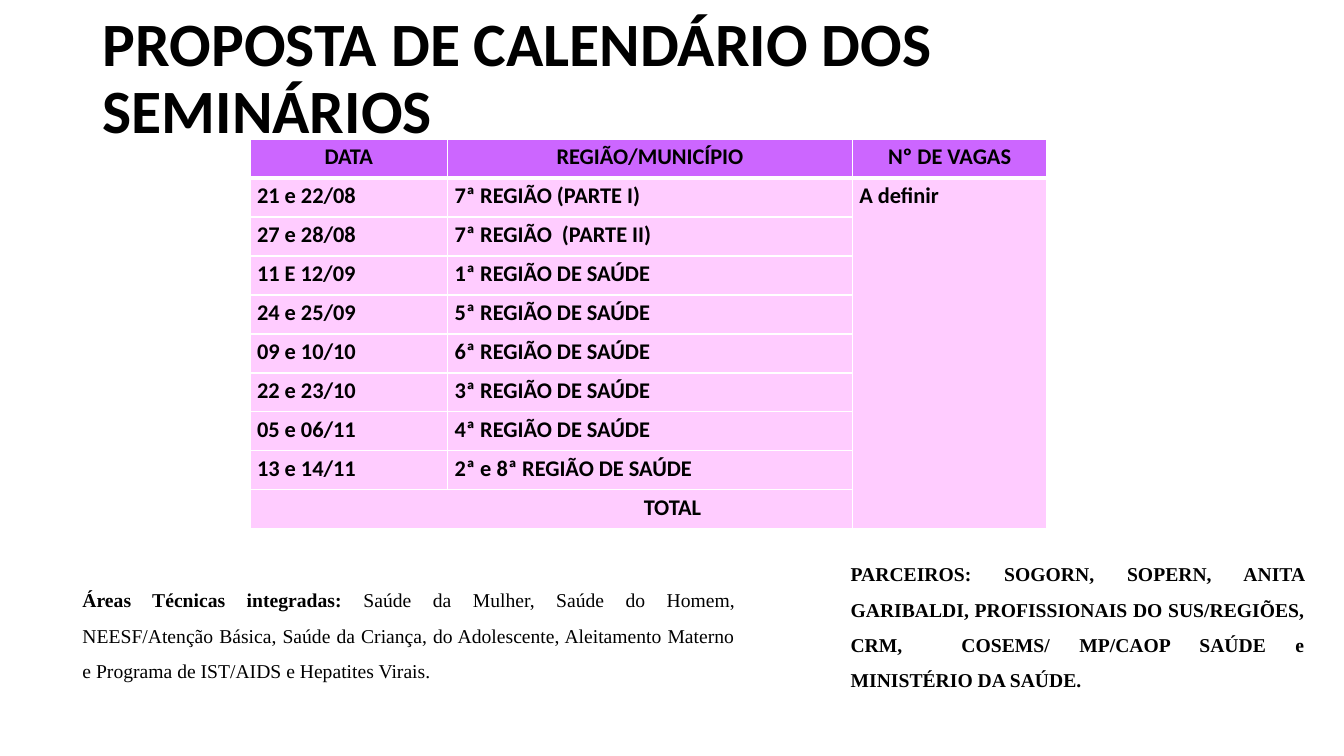
from pptx import Presentation
from pptx.dml.color import RGBColor
from pptx.enum.text import MSO_ANCHOR, MSO_AUTO_SIZE, PP_ALIGN
from pptx.oxml import parse_xml
from pptx.oxml.ns import nsdecls
from pptx.util import Inches, Pt

BLACK, WHITE, PURPLE, PINK = "000000", "FFFFFF", "CC66FF", "FFCCFF"
COLUMN_WEIGHTS = (1.96, 3.77, 1.93)
HEADER = ("DATA", "REGIÃO/MUNICÍPIO", "Nº DE VAGAS")
SEMINARS = (
    ("21 e 22/08", "7ª REGIÃO (PARTE I)"),
    ("27 e 28/08", "7ª REGIÃO  (PARTE II)"),
    ("11 E 12/09", "1ª REGIÃO DE SAÚDE"),
    ("24 e 25/09", "5ª REGIÃO DE SAÚDE"),
    ("09 e 10/10", "6ª REGIÃO DE SAÚDE"),
    ("22 e 23/10", "3ª REGIÃO DE SAÚDE"),
    ("05 e 06/11", "4ª REGIÃO DE SAÚDE"),
    ("13 e 14/11", "2ª e 8ª REGIÃO DE SAÚDE"),
)


def rgb(color):
    return RGBColor.from_string(color)


def area(prs, left, top, width, height):
    """Turn percentages of the slide into a box."""
    w, h = prs.slide_width, prs.slide_height
    return [int(size * share / 100) for size, share in
            ((w, left), (h, top), (w, width), (h, height))]


def style(p, font, size, align, spacing, bold=True):
    p.alignment, p.line_spacing = align, spacing
    p.font.name, p.font.size, p.font.bold = font, Pt(size), bold
    p.font.color.rgb = rgb(BLACK)


def add_title(s, box, text):
    title = s.shapes.title
    title.left, title.top, title.width, title.height = box
    tf = title.text_frame
    tf.text = text
    tf.auto_size, tf.vertical_anchor = MSO_AUTO_SIZE.NONE, MSO_ANCHOR.MIDDLE
    style(tf.paragraphs[0], "Calibri", 44, PP_ALIGN.LEFT, 0.9)


def format_cell(cell, is_header, below_header):
    # Borders come before the fill in the cell properties
    tc_pr = cell._tc.get_or_add_tcPr()
    for side in "LRTB":
        thick = (is_header and side == "B") or (below_header and side == "T")
        tc_pr.append(parse_xml(
            f'<a:ln{side} {nsdecls("a")} w="{Pt(3 if thick else 1)}"><a:solidFill>'
            f'<a:srgbClr val="{WHITE}"/></a:solidFill></a:ln{side}>'))
    cell.fill.solid()
    cell.fill.fore_color.rgb = rgb(PURPLE if is_header else PINK)
    cell.margin_left = cell.margin_right = Inches(0.07)
    cell.margin_top = cell.margin_bottom = 0
    align = PP_ALIGN.CENTER if is_header else PP_ALIGN.LEFT
    style(cell.text_frame.paragraphs[0], "Calibri", 16, align, 1.15)


def add_calendar(s, box):
    rows = [HEADER, *SEMINARS, ("TOTAL",)]
    last = len(rows) - 1
    table = s.shapes.add_table(len(rows), len(HEADER), *box).table
    for column, weight in zip(table.columns, COLUMN_WEIGHTS):
        column.width = int(box[2] * weight / sum(COLUMN_WEIGHTS))
    for r, texts in enumerate(rows):
        table.rows[r].height = box[3] // len(rows)
        for c, text in enumerate(texts):
            table.cell(r, c).text = text
        for c in range(len(HEADER)):
            format_cell(table.cell(r, c), r == 0, r == 1)

    # Places column and total row
    table.cell(1, 2).text_frame.paragraphs[0].add_run().text = "A definir"
    table.cell(1, 2).merge(table.cell(last, 2))
    table.cell(last, 0).merge(table.cell(last, 1))
    table.cell(last, 0).margin_left = int(box[2] * 0.51)


def add_note(s, box, lead, rest=""):
    tf = s.shapes.add_textbox(*box).text_frame
    tf.word_wrap = True
    p = tf.paragraphs[0]
    style(p, "Times New Roman", 14, PP_ALIGN.JUSTIFY, 1.5, bold=None)
    for text, bold in ((lead, True), (rest, False)):
        if text:
            r = p.add_run()
            r.text, r.font.bold = text, bold


def main():
    prs = Presentation()
    prs.slide_width, prs.slide_height = Inches(13.33), Inches(7.5)
    s = prs.slides.add_slide(prs.slide_layouts[5])
    add_title(s, area(prs, 6.9, 0.93, 86.25, 19.33),
              "PROPOSTA DE CALENDÁRIO DOS SEMINÁRIOS")
    add_calendar(s, area(prs, 18.6, 18.4, 57.45, 51.6))
    add_note(s, area(prs, 5.4, 75.6, 50.05, 15.45), "Áreas Técnicas integradas: ",
             "Saúde da Mulher, Saúde do Homem, NEESF/Atenção Básica, Saúde da "
             "Criança, do Adolescente, Aleitamento Materno e Programa de "
             "IST/AIDS e Hepatites Virais.")
    add_note(s, area(prs, 62.55, 72.15, 35.25, 20.15),
             "PARCEIROS: SOGORN, SOPERN, ANITA GARIBALDI, PROFISSIONAIS DO "
             "SUS/REGIÕES, CRM,  COSEMS/ MP/CAOP SAÚDE e MINISTÉRIO DA SAÚDE.")
    prs.save("out.pptx")


if __name__ == "__main__":
    main()
